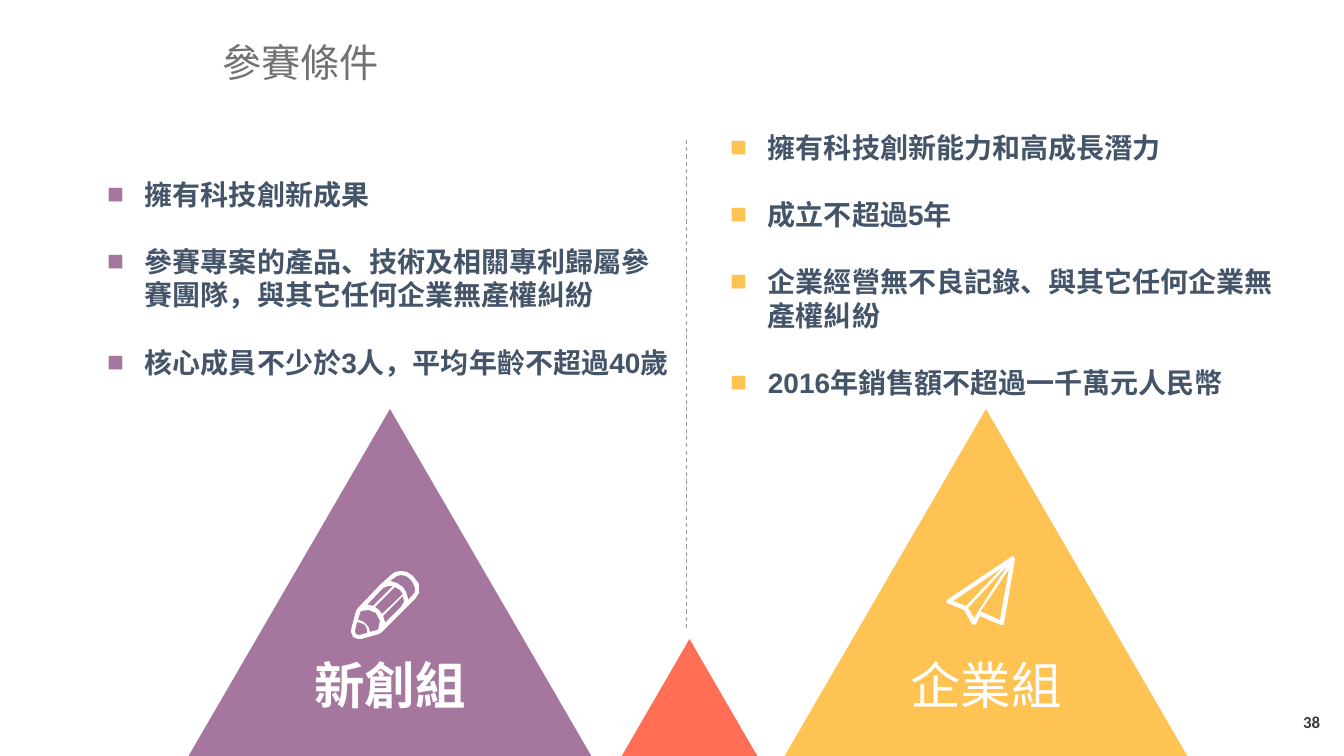
from lxml import etree
from pptx import Presentation
from pptx import util as u
from pptx.dml.color import RGBColor
from pptx.enum import dml, shapes, text
from pptx.oxml.ns import qn

PX = 914400 / 100.8
PURPLE, YELLOW, CORAL, WHITE = "A5779E", "FFC353", "FF6E55", "FFFFFF"

PENCIL = [
    [(62, 5), (56, 1), (50, 0), (44, 1), (40, 4), (29, 14), (7, 37), (5, 40), (0, 59),
     (0, 61), (2, 66), (7, 68), (10, 68), (28, 63), (31, 61), (64, 28), (68, 22), (68, 13)],
    [(61, 25), (57, 29), (57, 27), (55, 21), (52, 16), (46, 12), (39, 10), (43, 7),
     (46, 5), (50, 4), (55, 5), (59, 8), (62, 12), (64, 17), (64, 21)],
    [(19, 61), (18, 57), (15, 53), (11, 50), (7, 49), (9, 42), (10, 40), (18, 39),
     (25, 42), (29, 50), (27, 59), (26, 59)],
    [(9, 64), (7, 64), (5, 63), (4, 61), (4, 60), (6, 51), (10, 52), (14, 54), (16, 58), (16, 62)],
    [(22, 35), (19, 34), (16, 34), (32, 17), (37, 15), (42, 15)],
    [(31, 43), (28, 39), (24, 36), (44, 16), (49, 19), (52, 23)],
    [(34, 51), (32, 45), (52, 25), (53, 31), (50, 36), (34, 52)],
]
PAPER_PLANE = [
    [(68, 1), (66, 0), (65, 1), (1, 44), (0, 46), (1, 47), (18, 54), (26, 68), (28, 69),
     (30, 68), (34, 60), (55, 69), (57, 69), (58, 67), (69, 3)],
    [(54, 64), (36, 56), (34, 56), (63, 13)],
    [(22, 52), (62, 9), (28, 62)],
    [(7, 45), (56, 12), (20, 50)],
]


def px(*lengths):
    return [u.Emu(round(length * PX)) for length in lengths]


def paint(shape, color):
    shape.shadow.inherit = False
    shape.fill.solid()
    shape.fill.fore_color.rgb = RGBColor.from_string(color)
    shape.line.fill.background()


presentation = Presentation()
presentation.slide_width, presentation.slide_height = px(1344, 756)
slide = presentation.slides.add_slide(presentation.slide_layouts[3])
title, left_list, right_list = slide.placeholders

# Lists of entry conditions
conditions = [
    (left_list, (97, 172, 588, 240), PURPLE,
     ["擁有科技創新成果",
      "參賽專案的產品、技術及相關專利歸屬參賽團隊，與其它任何企業無產權糾紛",
      "核心成員不少於3人，平均年齡不超過40歲"]),
    (right_list, (720, 125, 588, 281), YELLOW,
     ["擁有科技創新能力和高成長潛力",
      "成立不超過5年",
      "企業經營無不良記錄、與其它任何企業無產權糾紛",
      "2016年銷售額不超過一千萬元人民幣"]),
]
for body, box, color, items in conditions:
    body.left, body.top, body.width, body.height = px(*box)
    frame = body.text_frame
    frame.text = "\n".join(items)
    frame.auto_size = text.MSO_AUTO_SIZE.NONE
    frame.vertical_anchor = text.MSO_ANCHOR.TOP
    for index, paragraph in enumerate(frame.paragraphs):
        properties = paragraph._p.get_or_add_pPr()
        properties.set("marL", "342900")
        properties.set("indent", "-342900")
        bullet_color = etree.SubElement(properties, qn("a:buClr"))
        etree.SubElement(bullet_color, qn("a:srgbClr"), val=color)
        etree.SubElement(properties, qn("a:buFont"), typeface="Arial")
        etree.SubElement(properties, qn("a:buChar"), char="■")
        paragraph.space_before = u.Pt(24 if index else 0)
        paragraph.line_spacing = u.Pt(24)
        font = paragraph.runs[0].font
        font.size, font.bold, font.name = u.Pt(20), True, "Arial"
        font.color.rgb = RGBColor.from_string("445469")

# Competition groups
groups = [
    (188, PURPLE, PENCIL, (351, 571), "新創組", True),
    (784, YELLOW, PAPER_PLANE, (946, 556), "企業組", False),
]
labels = [(title, "參賽條件", (212, 30, 178, 57), 28, 36, "767171",
           "Noto Sans CJK JP", False, text.PP_ALIGN.LEFT)]
for left, color, icon, corner, name, bold in groups:
    group = slide.shapes.add_group_shape()
    triangle = group.shapes.add_shape(
        shapes.MSO_SHAPE.ISOSCELES_TRIANGLE, *px(left, 409, 404, 348))
    paint(triangle, color)
    builder = group.shapes.build_freeform(*icon[0][0], scale=PX)
    builder.add_line_segments(icon[0][1:])
    for contour in icon[1:]:
        builder.move_to(*contour[0])
        builder.add_line_segments(contour[1:])
    paint(builder.convert_to_shape(*px(*corner)), WHITE)
    box = (left + 112, 644, 180, 72)
    label = group.shapes.add_textbox(*px(*box))
    labels.append((label, name, box, 36, 47, WHITE, "Noto Sans CJK SC", bold,
                   text.PP_ALIGN.CENTER))

small_triangle = slide.shapes.add_shape(
    shapes.MSO_SHAPE.ISOSCELES_TRIANGLE, *px(620, 639, 139, 120))
paint(small_triangle, CORAL)

divider = slide.shapes.add_connector(
    shapes.MSO_CONNECTOR.STRAIGHT, *px(687, 140, 687, 628))
divider.line.color.rgb = RGBColor.from_string("999999")
divider.line.width = u.Pt(0.75)
divider.line.dash_style = dml.MSO_LINE.DASH
etree.SubElement(divider._element.spPr, qn("a:effectLst"))

# Title, group names and page number
page_box = (1028, 706, 302, 30)
page_number = slide.shapes.add_textbox(*px(*page_box))
labels.append((page_number, "38", page_box, 12, 15, "3B3838", "Calibri", True,
               text.PP_ALIGN.RIGHT))
for shape, words, box, size, line_height, color, typeface, bold, alignment in labels:
    shape.left, shape.top, shape.width, shape.height = px(*box)
    frame = shape.text_frame
    frame.text = words
    frame.auto_size = text.MSO_AUTO_SIZE.NONE
    frame.word_wrap = shape is page_number
    frame.vertical_anchor = text.MSO_ANCHOR.TOP
    paragraph = frame.paragraphs[0]
    paragraph.alignment = alignment
    paragraph.line_spacing = u.Pt(line_height)
    run = paragraph.runs[0]
    run.font.size, run.font.bold, run.font.name = u.Pt(size), bold, typeface
    run.font.color.rgb = RGBColor.from_string(color)
    east_asian = etree.Element(qn("a:ea"), typeface=typeface)
    run.font._element.find(qn("a:latin")).addnext(east_asian)

presentation.save("out.pptx")
